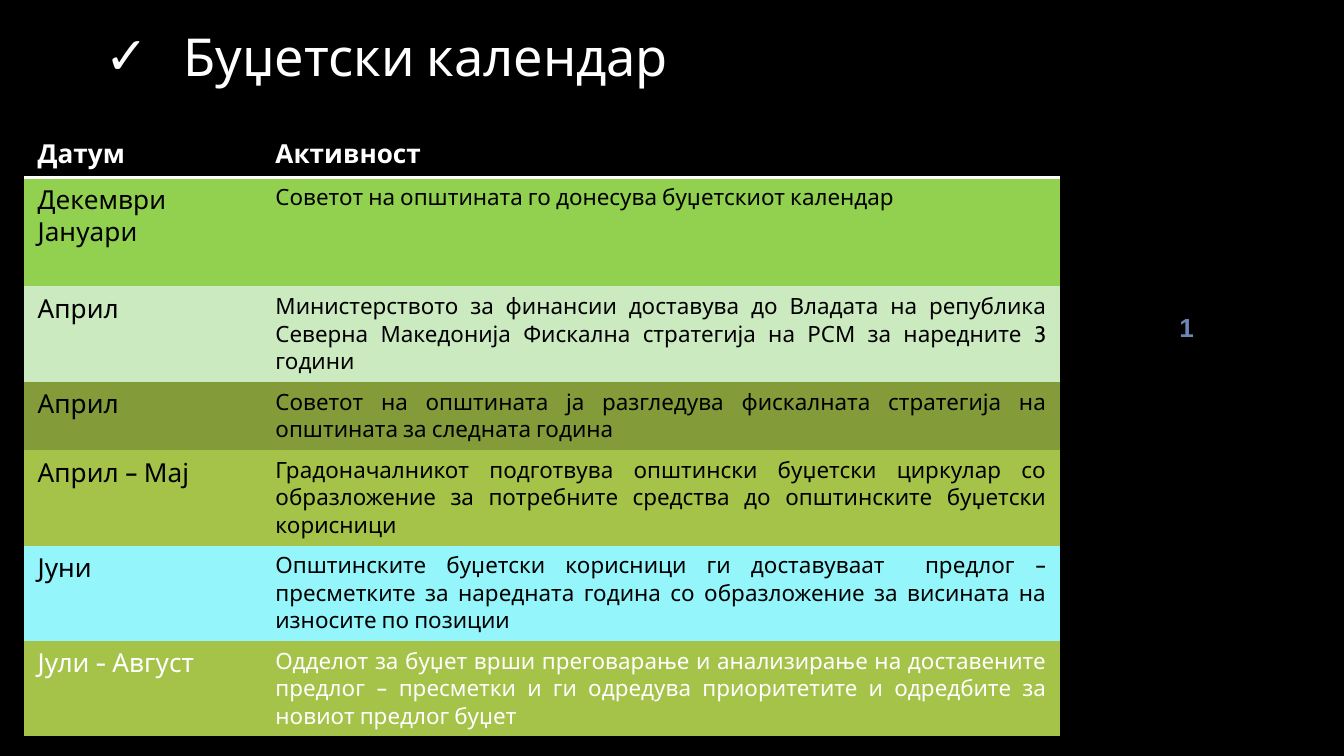
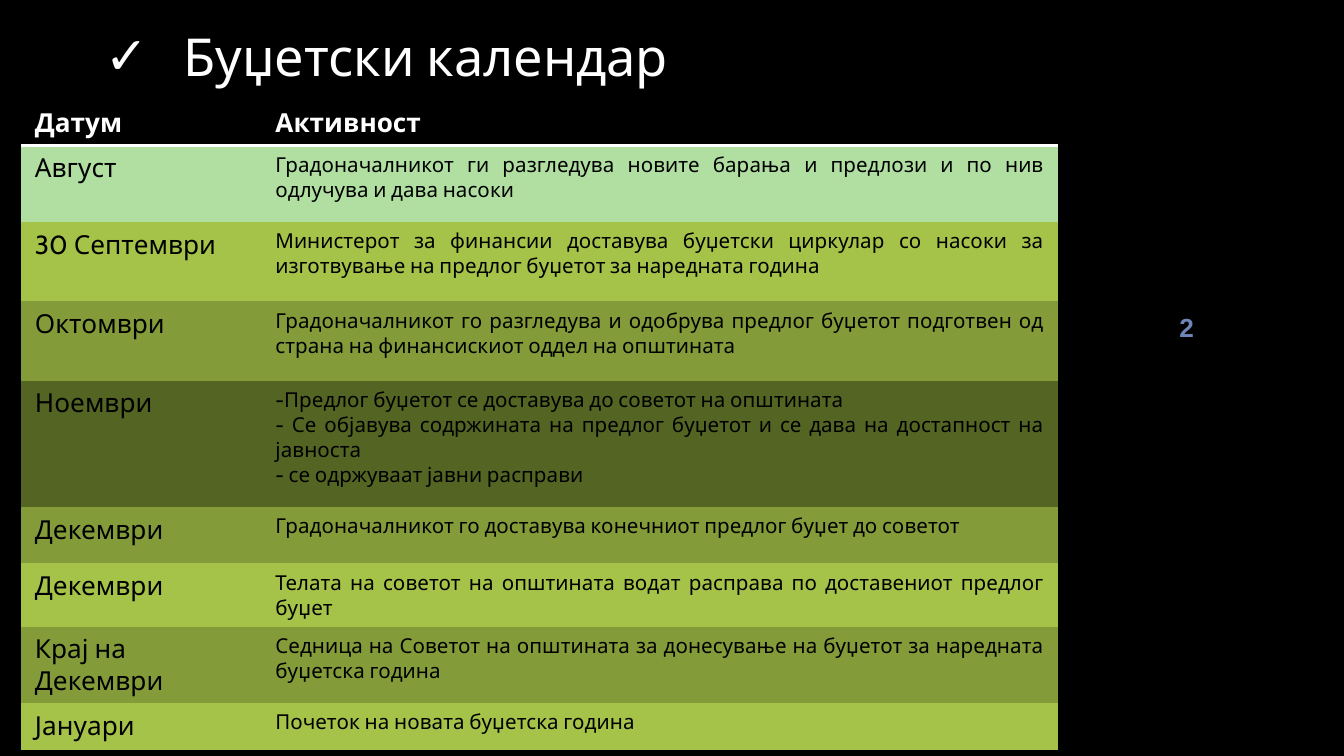
import pptx
import pptx.dml.color
import pptx.enum.text
import pptx.oxml
import pptx.oxml.ns
import pptx.util

Inches = pptx.util.Inches
RGBColor = pptx.dml.color.RGBColor
Align = pptx.enum.text.PP_ALIGN
Anchor = pptx.enum.text.MSO_ANCHOR

# Colours
BLACK = RGBColor(0x00, 0x00, 0x00)
WHITE = RGBColor(0xFF, 0xFF, 0xFF)
PAGE_BLUE = RGBColor(0x6E, 0x86, 0xB6)
GRASS = RGBColor(0x92, 0xD0, 0x50)
PALE_GREEN = RGBColor(0xCB, 0xEA, 0xC0)
MINT = RGBColor(0xB0, 0xDF, 0xA1)
LIME = RGBColor(0xA5, 0xC2, 0x49)
OLIVE = RGBColor(0x84, 0x9B, 0x3A)
DARK_OLIVE = RGBColor(0x54, 0x64, 0x22)
CYAN = RGBColor(0x94, 0xF5, 0xFA)

# Shared text and formats
PAGE_WIDTH = Inches(10)
PAGE_HEIGHT = PAGE_WIDTH * 9 // 16
TITLE = " Буџетски календар"
HEADINGS = ("Датум", "Активност")
TITLE_FONT = {"name": "Cabin", "size": pptx.util.Pt(28)}
CELL_FONT = {"name": "Cabin", "size": pptx.util.Pt(14), "bold": False}
HEADING_FONT = {**CELL_FONT, "bold": True}
NUMBER_FONT = {"name": "Arial", "size": pptx.util.Pt(14), "bold": True}
PLAIN_TABLE = "{2D5ABB26-0587-4C30-8999-92F81FD0307C}"

# Calendar rows: height, fill, text colour, date lines, activity lines
FIRST_HALF = [
    (0.81, GRASS, BLACK, ["Декември", "Јануари"],
     ["Советот на општината го донесува буџетскиот календар"]),
    (0.71, PALE_GREEN, BLACK, ["Април"],
     ["Министерството за финансии доставува до Владата на република Северна "
      "Македонија Фискална стратегија на РСМ за наредните 3 години"]),
    (0.51, OLIVE, BLACK, ["Април"],
     ["Советот на општината ја разгледува фискалната стратегија на "
      "општината за следната година"]),
    (0.71, LIME, BLACK, ["Април – Мај"],
     ["Градоначалникот подготвува општински буџетски циркулар со образложение "
      "за потребните средства до општинските буџетски корисници"]),
    (0.71, CYAN, BLACK, ["Јуни"],
     ["Општинските буџетски корисници ги доставуваат  предлог – пресметките за "
      "наредната година со образложение за висината на износите по позиции"]),
    (0.71, LIME, WHITE, ["Јули - Август"],
     ["Одделот за буџет врши преговарање и анализирање на доставените предлог – "
      "пресметки и ги одредува приоритетите и одредбите за новиот предлог буџет"]),
]
SECOND_HALF = [
    (0.57, MINT, BLACK, ["Август"],
     ["Градоначалникот ги разгледува новите барања и предлози и по нив "
      "одлучува и дава насоки "]),
    (0.59, LIME, BLACK, ["30 Септември"],
     ["Министерот за финансии доставува буџетски циркулар со насоки за "
      "изготвување на предлог буџетот за наредната година"]),
    (0.59, OLIVE, BLACK, ["Октомври"],
     ["Градоначалникот го разгледува и одобрува предлог буџетот подготвен од "
      "страна на финансискиот оддел на општината"]),
    (0.94, DARK_OLIVE, BLACK, ["Ноември"],
     ["Предлог буџетот се доставува до советот на општината ",
      " Се објавува содржината на предлог буџетот и се дава на достапност на јавноста",
      " се одржуваат јавни расправи"]),
    (0.42, OLIVE, BLACK, ["Декември"],
     ["Градоначалникот го доставува конечниот предлог буџет до советот"]),
    (0.47, LIME, BLACK, ["Декември"],
     ["Телата на советот на општината водат расправа по доставениот предлог буџет"]),
    (0.57, OLIVE, BLACK, ["Крај на Декември"],
     ["Седница на Советот на општината за донесување на буџетот за "
      "наредната буџетска година"]),
    (0.35, LIME, BLACK, ["Јануари"], ["Почеток на новата буџетска година"]),
]


def apply(target, values):
    for name, value in values.items():
        setattr(target, name, value)


def add_xml(parent, body):
    """Append one DrawingML element, written without its namespace."""
    declared = body.replace(">", " " + pptx.oxml.ns.nsdecls("a") + ">", 1)
    parent.append(pptx.oxml.parse_xml(declared))


def add_bullet(para, mark, color, font_name, hanging=0):
    props = para._p.get_or_add_pPr()
    props.set("marL", str(Inches(hanging)))
    props.set("indent", str(-Inches(hanging)))
    add_xml(props, f'<a:buClr><a:srgbClr val="{color}"/></a:buClr>')
    add_xml(props, f'<a:buFont typeface="{font_name}"></a:buFont>')
    add_xml(props, f'<a:buChar char="{mark}"></a:buChar>')


def write(frame, lines, font, color, align=Align.LEFT, bullet=None, hanging=0):
    for index, line in enumerate(lines):
        para = frame.paragraphs[0] if index == 0 else frame.add_paragraph()
        para.alignment = align
        if bullet:
            add_bullet(para, bullet, color, font["name"], hanging)
        span = para.add_run()
        span.text = line
        apply(span.font, font)
        span.font.color.rgb = color


def add_text_box(page, left, top, width, height, **frame_format):
    box = page.shapes.add_textbox(*map(Inches, (left, top, width, height)))
    apply(box.text_frame, {"word_wrap": True, **frame_format})
    return box.text_frame


def fill_cell(cell, color):
    cell.fill.solid()
    cell.fill.fore_color.rgb = color


def underline_cell(cell, color, points):
    border = (f'<a:lnB w="{pptx.util.Pt(points)}"><a:solidFill>'
              f'<a:srgbClr val="{color}"/></a:solidFill></a:lnB>')
    add_xml(cell._tc.get_or_add_tcPr(), border)
    # Borders come before the fill in cell properties
    props = cell._tc.tcPr
    props.insert(0, props[-1])


def add_calendar(page, left, top, widths, heading_height, rows, activity_size):
    heights = [heading_height] + [row[0] for row in rows]
    frame = page.shapes.add_table(
        len(heights), len(widths), Inches(left), Inches(top),
        Inches(sum(widths)), Inches(sum(heights)))
    table = frame.table
    apply(table, {"first_row": False, "horz_banding": False})
    table._tbl.tblPr.find(pptx.oxml.ns.qn("a:tableStyleId")).text = PLAIN_TABLE
    for column, width in zip(table.columns, widths):
        column.width = Inches(width)
    for table_row, height in zip(table.rows, heights):
        table_row.height = Inches(height)

    # Heading row
    for cell, heading in zip(table.rows[0].cells, HEADINGS):
        fill_cell(cell, BLACK)
        underline_cell(cell, WHITE, 2)
        write(cell.text_frame, [heading], HEADING_FONT, WHITE)

    # Date and activity rows
    activity_font = {**CELL_FONT, "size": pptx.util.Pt(activity_size)}
    for number, (_, fill, color, dates, activities) in enumerate(rows, 1):
        date_cell, activity_cell = table.rows[number].cells
        fill_cell(date_cell, fill)
        fill_cell(activity_cell, fill)
        write(date_cell.text_frame, dates, CELL_FONT, color)
        write(activity_cell.text_frame, activities, activity_font, color,
              Align.JUSTIFY, "-" if len(activities) > 1 else None)


def add_page(deck, number):
    page = deck.slides.add_slide(deck.slide_layouts[6])
    page.background.fill.solid()
    page.background.fill.fore_color.rgb = BLACK
    # Page number
    frame = add_text_box(page, 8.06, 2.27, 1.54, 2.95)
    write(frame, [str(number)], NUMBER_FONT, PAGE_BLUE, Align.CENTER)
    # Title with check mark
    sides = ("left", "top", "right", "bottom")
    margins = {f"margin_{side}": Inches(0.1) for side in sides}
    frame = add_text_box(page, 0.68, 0.08, 8.41, 0.67,
                         vertical_anchor=Anchor.BOTTOM, **margins)
    write(frame, [TITLE], TITLE_FONT, WHITE, bullet="✓", hanging=0.5)
    return page


def main():
    deck = pptx.Presentation()
    apply(deck, {"slide_width": PAGE_WIDTH, "slide_height": PAGE_HEIGHT})
    add_calendar(add_page(deck, 1), 0.18, 0.98, (1.77, 5.94), 0.34, FIRST_HALF, 12)
    add_calendar(add_page(deck, 2), 0.16, 0.75, (1.79, 5.92), 0.33, SECOND_HALF, 11)
    deck.save("out.pptx")


if __name__ == "__main__":
    main()
